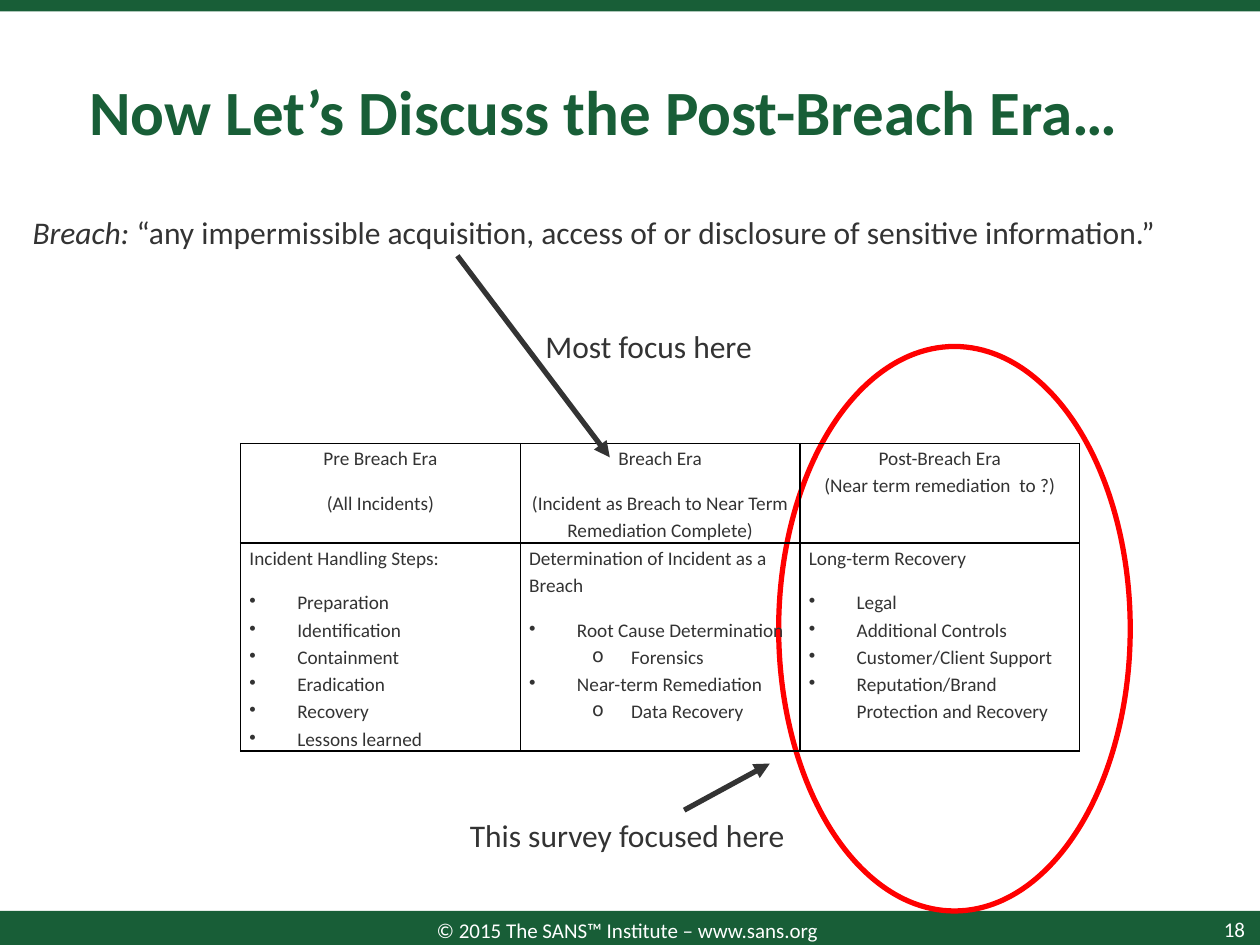
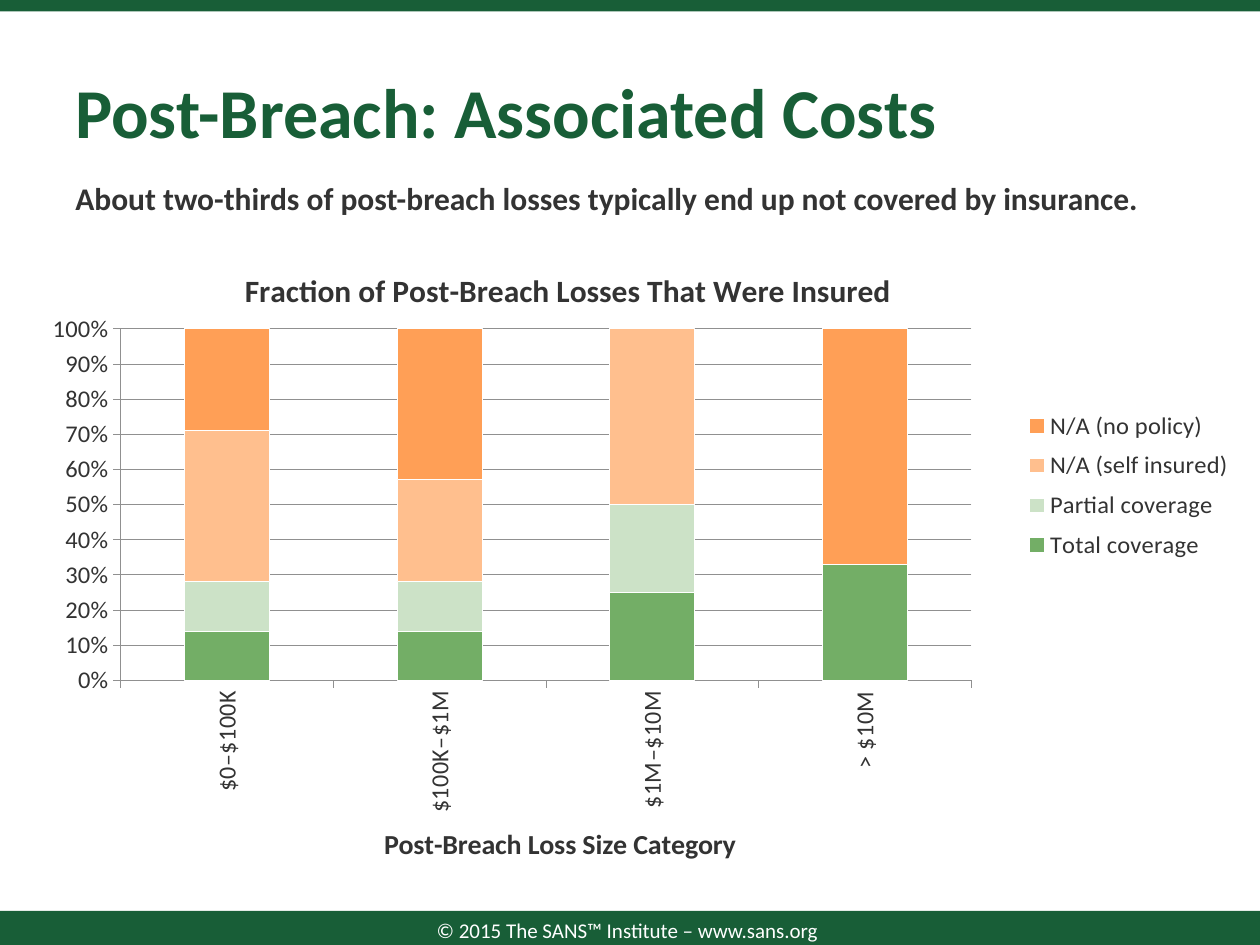
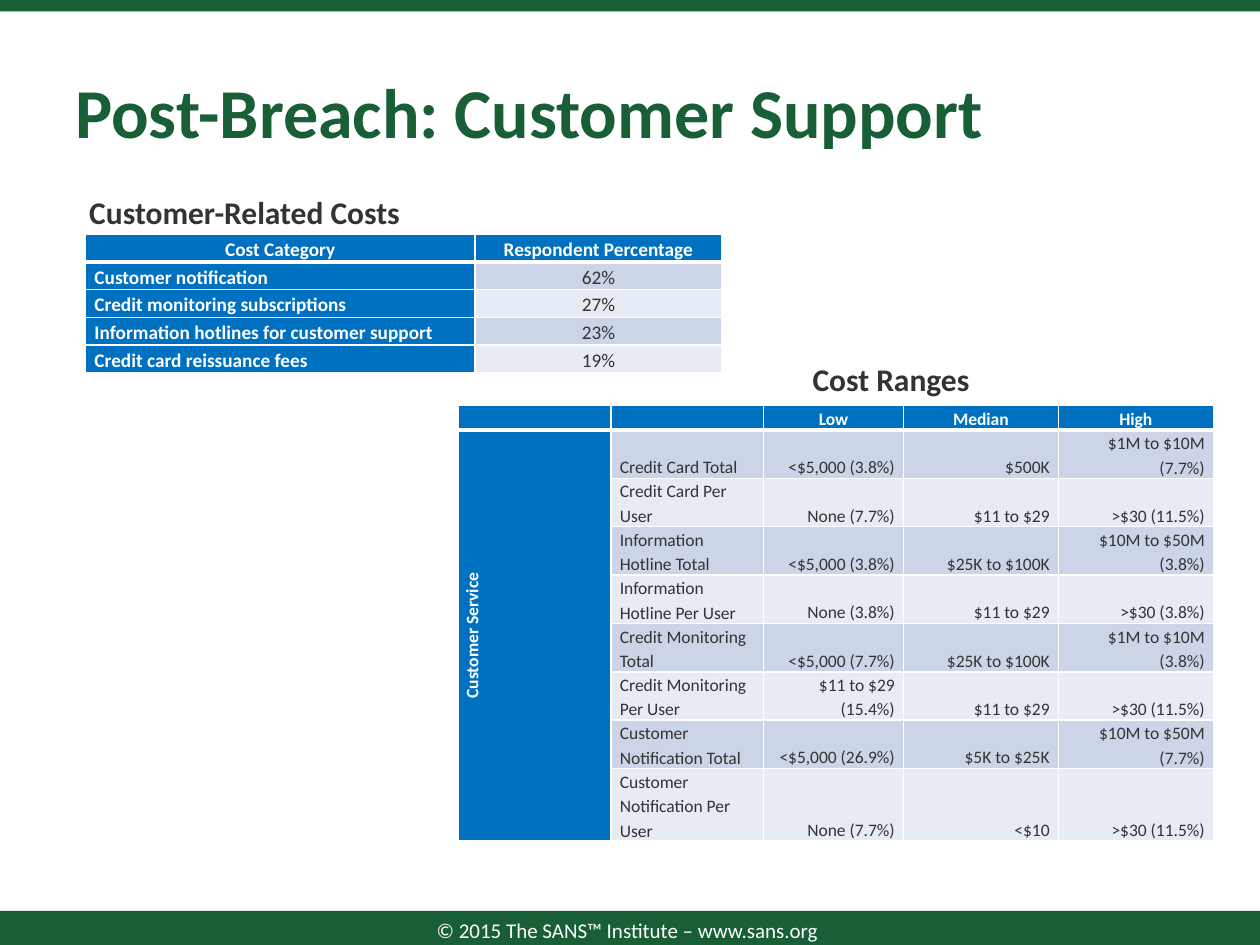
from lxml import etree
from pptx import Presentation
from pptx.chart.data import CategoryChartData
from pptx.dml.color import RGBColor
from pptx.enum.chart import XL_CHART_TYPE, XL_LEGEND_POSITION, XL_TICK_MARK
from pptx.enum.shapes import MSO_CONNECTOR, MSO_SHAPE
from pptx.enum.text import MSO_ANCHOR, PP_ALIGN
from pptx.oxml.ns import qn
from pptx.util import Inches, Pt

GREEN = RGBColor(0x18, 0x5E, 0x37)
DARK = RGBColor(0x33, 0x33, 0x33)
WHITE = RGBColor(0xFF, 0xFF, 0xFF)
BLACK = RGBColor(0x00, 0x00, 0x00)
RED = RGBColor(0xFF, 0x00, 0x00)
GREY = RGBColor(0x90, 0x90, 0x90)
BLUE = RGBColor(0x00, 0x70, 0xC0)
PALE = RGBColor(0xE7, 0xEB, 0xF4)
MIST = RGBColor(0xCC, 0xD5, 0xE8)
LEAF = RGBColor(0x73, 0xAE, 0x66)
MINT = RGBColor(0xCC, 0xE2, 0xC7)
PEACH = RGBColor(0xFF, 0xBF, 0x8E)
AMBER = RGBColor(0xFF, 0x9F, 0x56)
LEFT, MID, RIGHT = PP_ALIGN.LEFT, PP_ALIGN.CENTER, PP_ALIGN.RIGHT
TOP, HALF, BASE = MSO_ANCHOR.TOP, MSO_ANCHOR.MIDDLE, MSO_ANCHOR.BOTTOM
FONT = "Calibri"
# level: (bullet, left margin, indent)
MARKS = {1: ("•", 0.38, -0.38), 2: ("o", 0.81, -0.31)}


def write(box, lines, size, color=DARK, bold=False, align=LEFT, anchor=TOP,
          pitch=None, after=0):
    """Fill a text frame or cell; each line is a text or (text, bullet level)."""
    box.vertical_anchor = anchor
    frame = getattr(box, "text_frame", box)
    frame.word_wrap = True
    for i, line in enumerate(lines):
        text, level = line if isinstance(line, tuple) else (line, 0)
        para = frame.add_paragraph() if i else frame.paragraphs[0]
        para.text = text
        look = {"alignment": align, "line_spacing": pitch}
        if after and (level == 0 or i == len(lines) - 1):
            look["space_after"] = Pt(after)
        for key, val in look.items():
            setattr(para, key, val)
        if level:
            mark, left, indent = MARKS[level]
            props = para._p.get_or_add_pPr()
            props.set("marL", str(Inches(left)))
            props.set("indent", str(Inches(indent)))
            etree.SubElement(props, qn("a:buChar"), char=mark)
        for run in para.runs:
            for key, val in {"name": FONT, "size": Pt(size), "bold": bold}.items():
                setattr(run.font, key, val)
            run.font.color.rgb = color
        for brk in para._p.findall(qn("a:br")):
            etree.SubElement(brk, qn("a:rPr"), sz=str(size * 100))
        etree.SubElement(para._p, qn("a:endParaRPr"), sz=str(size * 100))
    return frame


def grid(slide, spot, cols, rows, ink, blue):
    """Add a ruled table; blue ones get a header row, a header column and bands."""
    frame = slide.shapes.add_table(len(rows), len(cols), *map(Inches, spot),
                                   Inches(sum(cols)), Inches(sum(rows)))
    table = frame.table
    for col, width in zip(table.columns, cols):
        col.width = Inches(width)
    for r, height in enumerate(rows):
        table.rows[r].height = Inches(height)
        for c in range(len(cols)):
            cell = table.cell(r, c)
            cell.margin_left = cell.margin_right = Inches(0.07)
            cell.margin_top = cell.margin_bottom = 0
            props = cell._tc.get_or_add_tcPr()
            wide = {"T": blue and r == 1, "B": blue and r == 0}
            for side in "LRTB":
                width = Pt(3 if wide.get(side) else 1)
                rule = etree.SubElement(props, qn(f"a:ln{side}"), w=str(width))
                fill = etree.SubElement(rule, qn("a:solidFill"))
                etree.SubElement(fill, qn("a:srgbClr"), val=str(ink))
            if blue:
                cell.fill.solid()
                cell.fill.fore_color.rgb = (
                    BLUE if r == 0 or c == 0 else MIST if r % 2 else PALE)
            else:
                cell.fill.background()
    return table


prs = Presentation()
prs.slide_width, prs.slide_height = Inches(10), Inches(7.5)

# Bands, footer and title of every slide
slides = []
for title, size, left in (("Now Let’s Discuss the Post-Breach Era…", 36, 0.61),
                          ("Post-Breach: Associated Costs", 40, 0.5),
                          ("Post-Breach: Customer Support", 40, 0.5)):
    slide = prs.slides.add_slide(prs.slide_layouts[6])
    slides.append(slide)
    for top, height in ((7.23, 0.29), (0, 0.09)):
        band = slide.shapes.add_shape(MSO_SHAPE.RECTANGLE, 0, Inches(top),
                                      Inches(10), Inches(height))
        band.shadow.inherit = False
        band.fill.solid()
        band.fill.fore_color.rgb = GREEN
        band.line.fill.background()
    foot = slide.shapes.add_textbox(*map(Inches, (3.03, 7.24, 3.9, 0.28)))
    write(foot.text_frame, ["© 2015 The SANS™ Institute – www.sans.org"], 12,
          WHITE, align=MID, anchor=HALF)
    head = slide.shapes.add_textbox(*map(Inches, (left, 0.34, 9, 1.07)))
    write(head.text_frame, [title], size, GREEN, True, anchor=HALF)
eras, costs, support = slides

# Slide 1: the three eras
ring = eras.shapes.add_shape(MSO_SHAPE.OVAL, *map(Inches, (6.18, 2.75, 2.79, 4.48)))
ring.shadow.inherit = False
ring.fill.solid()
ring.fill.fore_color.rgb = WHITE
ring.line.color.rgb = RED
ring.line.width = Pt(3)

page = eras.shapes.add_textbox(*map(Inches, (9.04, 7.23, 0.94, 0.28)))
write(page.text_frame, ["18"], 12, WHITE, align=RIGHT, anchor=HALF)

STEPS = ("Preparation", "Identification", "Containment", "Eradication",
         "Recovery", "Lessons learned")
AIMS = ("Legal", "Additional Controls", "Customer/Client Support",
        "Reputation/Brand Protection and Recovery")
ERAS = [
    [["Pre Breach Era", "(All Incidents)"],
     ["Breach Era", "(Incident as Breach to Near Term Remediation Complete)"],
     ["Post-Breach Era\v(Near term remediation  to ?)"]],
    [["Incident Handling Steps:"] + [(step, 1) for step in STEPS],
     ["Determination of Incident as a Breach",
      ("Root Cause Determination", 1), ("Forensics", 2),
      ("Near-term Remediation", 1), ("Data Recovery", 2)],
     ["Long-term Recovery"] + [(aim, 1) for aim in AIMS]],
]
table = grid(eras, (1.91, 3.52), [2.22] * 3, [0.79, 1.65], BLACK, False)
for r, row in enumerate(ERAS):
    for c, lines in enumerate(row):
        write(table.cell(r, c), lines, 11, align=LEFT if r else MID,
              pitch=1.15, after=10)

for text, spot in (
        ("Breach: “any impermissible acquisition, access of or disclosure of "
         "sensitive information.”", (0.16, 1.64, 9.69, 0.4)),
        ("Most focus here", (4.23, 2.55, 2.88, 0.4)),
        ("This survey focused here", (3.63, 6.43, 3.01, 0.4))):
    note = eras.shapes.add_textbox(*map(Inches, spot))
    term, colon, rest = text.partition(":")
    frame = write(note.text_frame, [term + colon], 18)
    if rest:
        para = frame.paragraphs[0]
        para.runs[0].font.italic = True
        run = para.add_run()
        run.text = rest
        for key, val in {"name": FONT, "size": Pt(18)}.items():
            setattr(run.font, key, val)
        run.font.color.rgb = DARK
        para._p.append(para._p.find(qn("a:endParaRPr")))

for ends in ((3.63, 2.03, 4.84, 3.63), (5.43, 6.43, 6.11, 6.06)):
    arrow = eras.shapes.add_connector(MSO_CONNECTOR.STRAIGHT, *map(Inches, ends))
    arrow.line.color.rgb = DARK
    arrow.line.width = Pt(3)
    etree.SubElement(arrow.line._get_or_add_ln(), qn("a:tailEnd"), type="triangle")
    etree.SubElement(arrow._element.spPr, qn("a:effectLst"))

# Slide 2: insured share of losses
lead = costs.shapes.add_textbox(*map(Inches, (0.5, 1.37, 9, 0.4)))
write(lead.text_frame, ["About two-thirds of post-breach losses typically end up "
                        "not covered by insurance."], 18, bold=True)

SHARES = (("Total coverage", (14, 14, 25, 33), LEAF),
          ("Partial coverage", (14, 14, 25, 0), MINT),
          ("N/A (self insured)", (43, 29, 50, 0), PEACH),
          ("N/A (no policy)", (29, 43, 0, 67), AMBER))
data = CategoryChartData()
data.categories = ["$0–$100K", "$100K–$1M", "$1M–$10M", "> $10M"]
for name, vals, _ in SHARES:
    data.add_series(name, vals)
chart = costs.shapes.add_chart(XL_CHART_TYPE.COLUMN_STACKED_100,
                               *map(Inches, (-0.12, 1.84, 10.09, 5.07)), data).chart
plot = chart.plots[0]
plot.gap_width, plot.overlap, plot.vary_by_categories = 150, 100, False
for bars, (_, _, color) in zip(plot.series, SHARES):
    bars.format.fill.solid()
    bars.format.fill.fore_color.rgb = color
    bars.format.line.color.rgb = WHITE
    bars.format.line.width = Pt(0.5)

cat, val = chart.category_axis, chart.value_axis
chart.has_title = cat.has_title = True
write(chart.chart_title.text_frame,
      ["Fraction of Post-Breach Losses That Were Insured"], 18, bold=True, align=MID)
write(cat.axis_title.text_frame, ["Post-Breach Loss Size Category"], 16,
      bold=True, align=MID)
chart.has_legend = True
legend = chart.legend
legend.position = XL_LEGEND_POSITION.RIGHT
legend.include_in_layout = False
val.has_major_gridlines = True
val.tick_labels.number_format = "0%"
val.tick_labels.number_format_is_linked = False
for axis in (cat, val):
    axis.major_tick_mark = XL_TICK_MARK.OUTSIDE
for line in (cat.format.line, val.format.line, val.major_gridlines.format.line):
    line.color.rgb = GREY
    line.width = Pt(0.5)
for font, size in ((chart.font, 10), (cat.tick_labels.font, 14),
                   (val.tick_labels.font, 14), (legend.font, 14)):
    font.name, font.size = FONT, Pt(size)
    font.color.rgb = DARK
turn = cat._element.find(qn("c:txPr")).find(qn("a:bodyPr"))
turn.set("rot", "-5400000")
turn.set("vert", "horz")

# Fixed places of the chart parts, as fractions of the chart
area = chart._chartSpace.chart.plotArea
for part, slot, box in ((area, 0, (0.107, 0.155, 0.669, 0.561)),
                        (chart.chart_title._element, 1, (0.2, 0.05)),
                        (cat.axis_title._element, 1, (0.31, 0.94)),
                        (legend._element, 1, (0.81, 0.27, 0.18, 0.27))):
    for old in part.findall(qn("c:layout")):
        part.remove(old)
    layout = etree.Element(qn("c:layout"))
    part.insert(slot, layout)
    manual = etree.SubElement(layout, qn("c:manualLayout"))
    if part is area:
        etree.SubElement(manual, qn("c:layoutTarget"), val="inner")
    for mode in ("xMode", "yMode"):
        etree.SubElement(manual, qn(f"c:{mode}"), val="edge")
    for key, num in zip("xywh", box):
        etree.SubElement(manual, qn(f"c:{key}"), val=str(num))

# Slide 3: customer costs
SHARE = [("Cost Category", "Respondent Percentage"),
         ("Customer notification", "62%"),
         ("Credit monitoring subscriptions", "27%"),
         ("Information hotlines for customer support", "23%"),
         ("Credit card reissuance fees", "19%")]
RANGE = [
    ("", "", "Low", "Median", "High"),
    ("Customer Service", "Credit Card Total", "<$5,000 (3.8%)", "$500K",
     "$1M to $10M (7.7%)"),
    ("", "Credit Card Per User", "None (7.7%)", "$11 to $29", ">$30 (11.5%)"),
    ("", "Information Hotline Total", "<$5,000 (3.8%)", "$25K to $100K",
     "$10M to $50M (3.8%)"),
    ("", "Information Hotline Per User", "None (3.8%)", "$11 to $29", ">$30 (3.8%)"),
    ("", "Credit Monitoring Total", "<$5,000 (7.7%)", "$25K to $100K",
     "$1M to $10M (3.8%)"),
    ("", "Credit Monitoring Per User", "$11 to $29 (15.4%)", "$11 to $29",
     ">$30 (11.5%)"),
    ("", "Customer Notification Total", "<$5,000 (26.9%)", "$5K to $25K",
     "$10M to $50M (7.7%)"),
    ("", "Customer Notification Per User", "None (7.7%)", "<$10", ">$30 (11.5%)"),
]
for rows, spot, cols, highs, sides, size, anchor, after in (
        (SHARE, (0.68, 1.86), [3.09, 1.96], [0.22] * 5,
         (LEFT, MID), 11, TOP, 10),
        (RANGE, (3.64, 3.22), [1.21, 1.21, 1.11, 1.23, 1.23],
         [0.19] + [0.38] * 7 + [0.56],
         (MID, LEFT, RIGHT, RIGHT, RIGHT), 10, BASE, 0)):
    table = grid(support, spot, cols, highs, WHITE, True)
    for r, row in enumerate(rows):
        for c, text in enumerate(row):
            lead = r == 0 or c == 0
            write(table.cell(r, c), [text], size, WHITE if lead else DARK, lead,
                  sides[c] if r else MID, anchor, 1.15, after)
group = table.cell(1, 0)
group.merge(table.cell(8, 0))
group.vertical_anchor = HALF
group._tc.get_or_add_tcPr().set("vert", "vert270")

for text, spot in (("Customer-Related Costs", (0.61, 1.48, 5.12, 0.4)),
                   ("Cost Ranges", (6.35, 2.81, 3.39, 0.4))):
    label = support.shapes.add_textbox(*map(Inches, spot))
    write(label.text_frame, [text], 18, bold=True, anchor=HALF)

prs.save("out.pptx")
